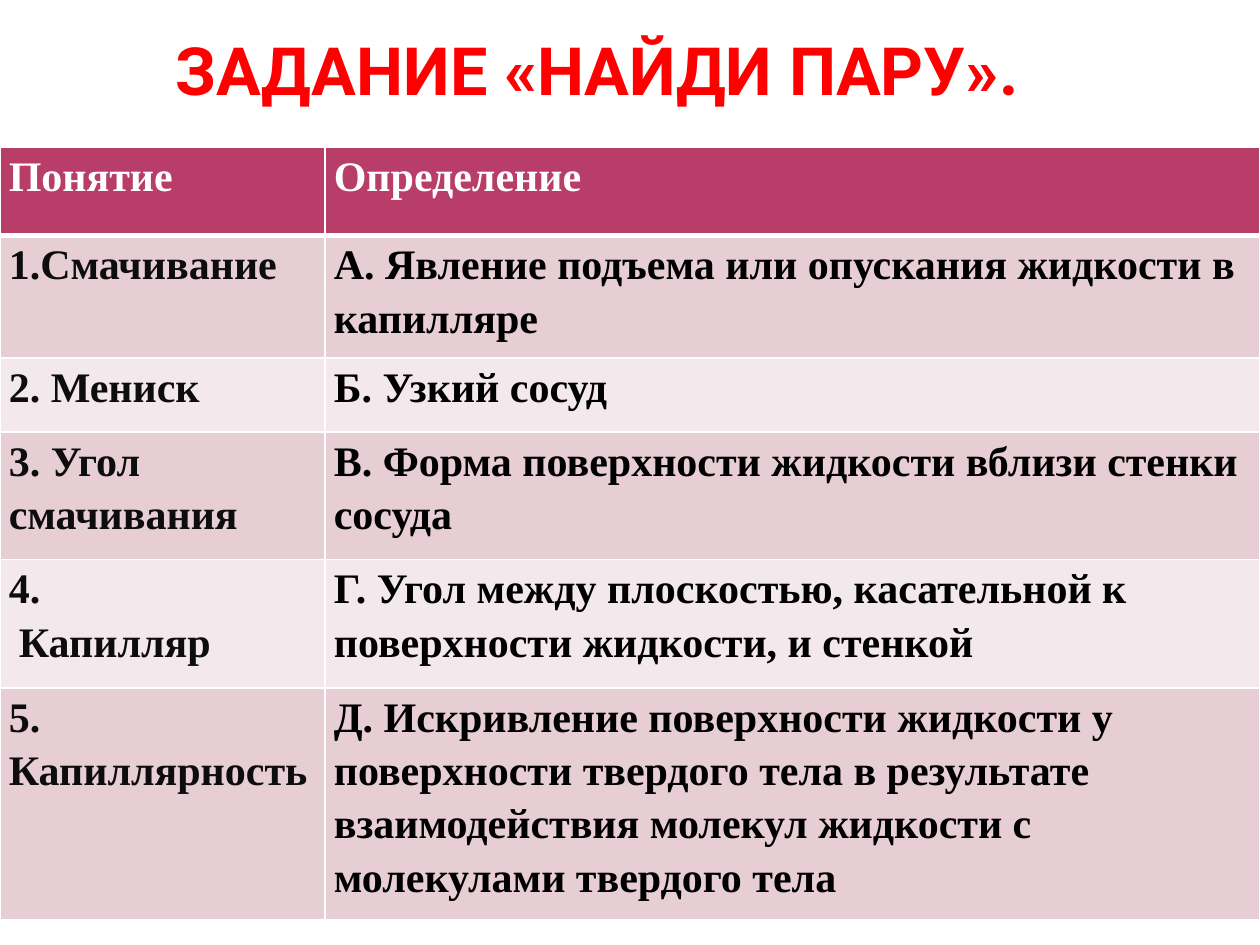
from pptx import Presentation
from pptx.dml.color import RGBColor
from pptx.enum.text import MSO_ANCHOR, PP_ALIGN
from pptx.oxml.ns import qn
from pptx.util import Inches, Pt
from lxml import etree

CENTER = PP_ALIGN.CENTER
BOTTOM = MSO_ANCHOR.BOTTOM

RED = RGBColor(0xFF, 0x00, 0x00)
WHITE = RGBColor(0xFF, 0xFF, 0xFF)
BLACK = RGBColor(0x00, 0x00, 0x00)
NEAR_BLACK = RGBColor(0x0D, 0x0D, 0x0D)
CRIMSON = RGBColor(0xB8, 0x3D, 0x68)
ROSE = RGBColor(0xE6, 0xCE, 0xD4)
PALE_ROSE = RGBColor(0xF3, 0xE8, 0xEB)

WIDTH, HEIGHT = Inches(10), Inches(7.5)
TITLE_BOX = Inches(0.78), Inches(-0.39), Inches(7.92), Inches(1.25)
TABLE_BOX = 0, Inches(1.17), WIDTH, Inches(5.98)
COLUMN_SHARES = 0.258, 0.742
ROW_HEIGHTS = 0.7, 0.97, 0.59, 1.01, 1.02, 1.69
SECOND_LINE_INDENT = Inches(0.08)

ROWS = [
    ("Понятие", "Определение"),
    ("1.Смачивание", "А. Явление подъема или опускания жидкости в капилляре"),
    ("2. Мениск", "Б. Узкий сосуд"),
    ("3. Угол смачивания", "В. Форма поверхности жидкости вблизи стенки сосуда"),
    ("4.\nКапилляр",
     "Г. Угол между плоскостью, касательной к поверхности жидкости, и стенкой"),
    ("5. Капиллярность",
     "Д. Искривление поверхности жидкости у поверхности твердого тела в результате "
     "взаимодействия молекул жидкости с молекулами твердого тела"),
]


def style_font(paragraph, name, size, color):
    font = paragraph.font
    font.name, font.size, font.bold = name, Pt(size), True
    font.color.rgb = color


def set_borders(cell, top, bottom):
    """Draw white cell borders; top and bottom are widths in points."""
    properties = cell._tc.get_or_add_tcPr()
    for side, width in (("L", 1), ("R", 1), ("T", top), ("B", bottom)):
        line = etree.SubElement(properties, qn(f"a:ln{side}"), w=str(Pt(width)))
        fill = etree.SubElement(line, qn("a:solidFill"))
        etree.SubElement(fill, qn("a:srgbClr"), val=str(WHITE))


def add_title(slide, box):
    frame = slide.shapes.add_textbox(*box).text_frame
    frame.word_wrap = True
    frame.vertical_anchor = BOTTOM
    frame.margin_left = frame.margin_right = Inches(0.05)
    frame.margin_top = frame.margin_bottom = 0
    paragraph = frame.paragraphs[0]
    paragraph.text = "ЗАДАНИЕ «НАЙДИ ПАРУ»."
    paragraph.alignment = CENTER
    style_font(paragraph, "Roboto", 38, RED)


def fill_cell(cell, text, color, background):
    cell.margin_left = cell.margin_right = Inches(0.07)
    cell.margin_top = cell.margin_bottom = 0
    cell.fill.solid()
    cell.fill.fore_color.rgb = background
    cell.text = text
    for index, paragraph in enumerate(cell.text_frame.paragraphs):
        paragraph.line_spacing = 1.15
        if index:
            paragraph._p.get_or_add_pPr().set("marL", str(SECOND_LINE_INDENT))
        style_font(paragraph, "Times New Roman", 24, color)


def add_pairs_table(slide, box):
    table = slide.shapes.add_table(len(ROWS), len(COLUMN_SHARES), *box).table
    for column, share in zip(table.columns, COLUMN_SHARES):
        column.width = int(box[2] * share)
    for row, height in zip(table.rows, ROW_HEIGHTS):
        row.height = int(box[3] * height / sum(ROW_HEIGHTS))
    for row_index, texts in enumerate(ROWS):
        is_header = row_index == 0
        background = CRIMSON if is_header else (PALE_ROSE, ROSE)[row_index % 2]
        colors = (WHITE, WHITE) if is_header else (NEAR_BLACK, BLACK)
        for column_index, (text, color) in enumerate(zip(texts, colors)):
            cell = table.cell(row_index, column_index)
            set_borders(cell, 3 if row_index == 1 else 1, 3 if is_header else 1)
            fill_cell(cell, text, color, background)


def main():
    presentation = Presentation()
    presentation.slide_width, presentation.slide_height = WIDTH, HEIGHT
    slide = presentation.slides.add_slide(presentation.slide_layouts[6])
    add_title(slide, TITLE_BOX)
    add_pairs_table(slide, TABLE_BOX)
    presentation.save("out.pptx")


if __name__ == "__main__":
    main()
